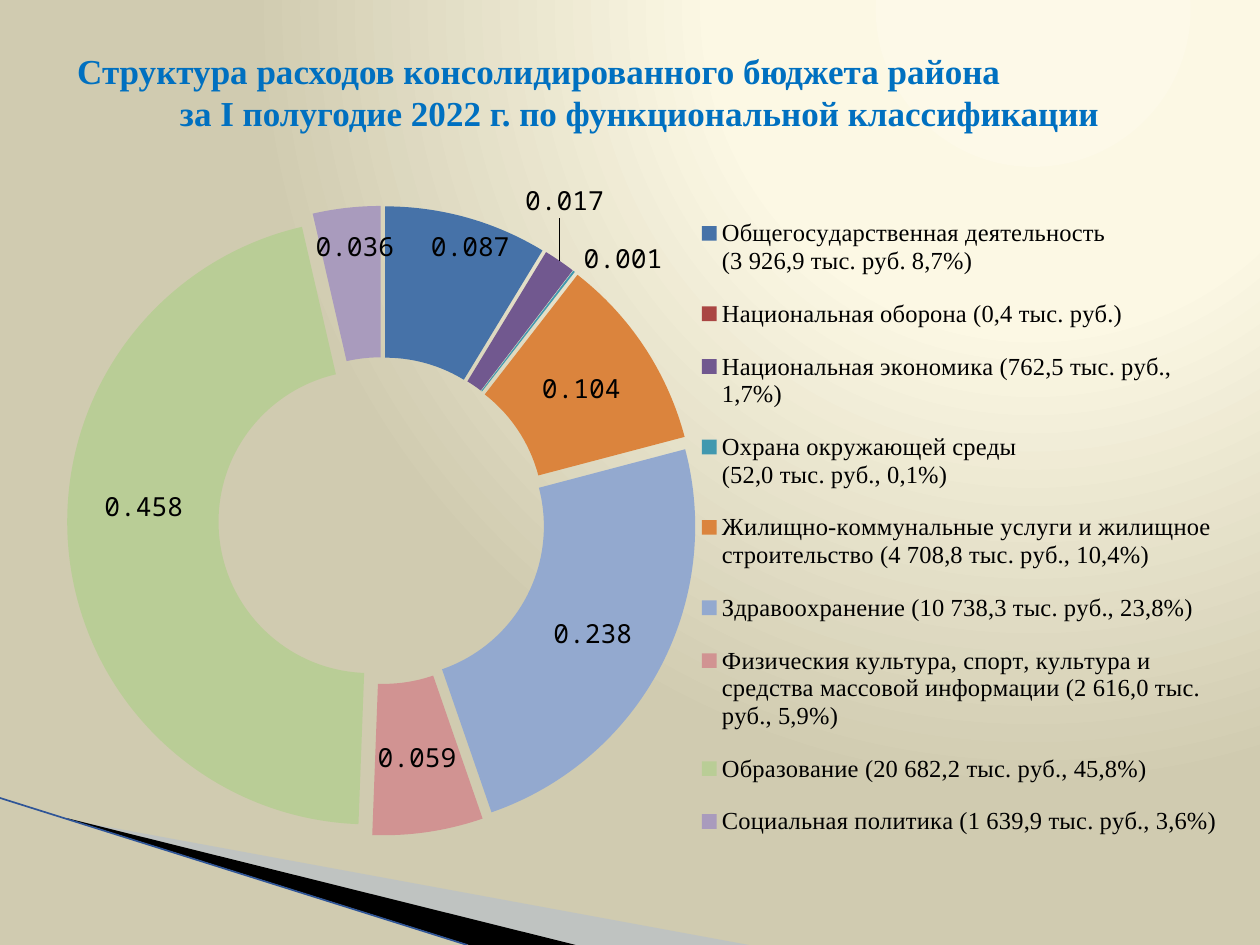
from lxml import etree
from pptx import Presentation
from pptx.chart.data import CategoryChartData
from pptx.dml.color import RGBColor
from pptx.enum import chart as ch, shapes, text
from pptx.oxml import parse_xml
from pptx.oxml.ns import nsdecls, qn
from pptx.util import Pt

THEME = {
    "sans": "Noto Sans Mono", "serif": "Times New Roman",
    "title": 20, "label": 15, "legend": 14,
    "blue": "0070C0", "ink": "000000", "haze": "A7B9DB", "edge": "2F5597",
    "back": [(0, "FDF9E8"), (40, "FCF8E4"), (100, "D0CBB0")],
}

# Title lines: wording, alignment
TITLE = [
    ("Структура расходов консолидированного бюджета района", "LEFT"),
    ("за I полугодие 2022 г. по функциональной классификации", "CENTER"),
]
# Spending: legend wording, share, colour, label shift as part of the chart
SPEND = [
    ("Общегосударственная деятельность\n(3 926,9 тыс. руб. 8,7%)", 0.087, "4672A8", (0.02, -0.06)),
    ("Национальная оборона (0,4 тыс. руб.)", None, "AA4643", None),
    ("", None, "89A54E", None),
    ("Национальная экономика (762,5 тыс. руб., 1,7%)", 0.017, "71588F", (0.04, -0.17)),
    ("Охрана окружающей среды\n(52,0 тыс. руб., 0,1%)", 0.001, "4198AF", (0.08, -0.1)),
    ("Жилищно-коммунальные услуги и жилищное строительство (4 708,8 тыс. руб., 10,4%)",
     0.104, "DB843D", None),
    ("Здравоохранение (10 738,3 тыс. руб., 23,8%)", 0.238, "93A9CF", None),
    ("Физическия культура, спорт, культура и средства массовой информации "
     "(2 616,0 тыс. руб., 5,9%)", 0.059, "D19392", None),
    ("Образование (20 682,2 тыс. руб., 45,8%)", 0.458, "B9CD96", (0, -0.05)),
    ("Социальная политика (1 639,9 тыс. руб., 3,6%)", 0.036, "A99BBD", (0, -0.05)),
]
# Corner wedges: outline, colour, opacity in percent
WEDGES = [
    ([(39.6, 468.5), (428, 540), (328, 540), (39.6, 468)], "haze", 40),
    ([(38, 467.5), (329, 540), (268, 540), (39, 468)], "ink", 100),
]
PLOT = (0.01, 0.056, 0.548, 0.869)
KEY = (0.549, 0.04, 0.44, 0.92)


def rgb(name):
    return RGBColor.from_string(THEME.get(name, name))


def style(obj, **vals):
    for key, val in vals.items():
        setattr(obj, key, val)


def font(obj, face, size, color, bold=False):
    style(obj, name=THEME[face], size=Pt(THEME[size]), bold=bold)
    obj.color.rgb = rgb(color)


def node(tag, body=""):
    return parse_xml(f"<{tag} {nsdecls('c', 'a')}>{body}</{tag}>")


def layout(box, inner=False):
    kind = '<c:layoutTarget val="inner"/>' if inner else ""
    modes = '<c:xMode val="edge"/><c:yMode val="edge"/>' if len(box) == 4 else ""
    size = "".join(f'<c:{k} val="{v}"/>' for k, v in zip("xywh", box))
    return f"<c:manualLayout>{kind}{modes}{size}</c:manualLayout>"


def set_layout(part, box, after, inner=False):
    for old in part.findall(qn("c:layout")):
        part.remove(old)
    new = node("c:layout", layout(box, inner))
    if after is None:
        part.insert(0, new)
    else:
        after.addnext(new)


def paint_back(slide):
    slide.background.fill.gradient()
    grad = slide.element.find(".//" + qn("a:gradFill"))
    stops = "".join(f'<a:gs pos="{p * 1000}"><a:srgbClr val="{c}"/></a:gs>'
                    for p, c in THEME["back"])
    for kid in list(grad):
        grad.remove(kid)
    grad.append(node("a:gsLst", stops))
    shade = etree.SubElement(grad, qn("a:path"), {"path": "circle"})
    etree.SubElement(shade, qn("a:fillToRect"), {"l": "65000", "b": "98000"})


def add_wedge(slide, pts, color, alpha):
    pts = [(Pt(x), Pt(y)) for x, y in pts]
    form = slide.shapes.build_freeform(*pts[0], scale=1.0)
    form.add_line_segments(pts[1:], close=True)
    wedge = form.convert_to_shape()
    wedge.shadow.inherit = False
    wedge.fill.solid()
    wedge.fill.fore_color.rgb = rgb(color)
    wedge.line.fill.background()
    if alpha < 100:
        tint = wedge.element.spPr.find(".//" + qn("a:srgbClr"))
        etree.SubElement(tint, qn("a:alpha"), val=str(alpha * 1000))


def add_edge(slide):
    edge = slide.shapes.add_connector(
        shapes.MSO_CONNECTOR.STRAIGHT, Pt(0), Pt(456), Pt(267), Pt(540))
    edge.line.width = Pt(0.95)
    edge.line.color.rgb = rgb("edge")
    etree.SubElement(edge.element.spPr, qn("a:effectLst"))


def add_ring(slide):
    data = CategoryChartData()
    data.categories = [row[0] for row in SPEND]
    data.add_series("Series 1", [row[1] for row in SPEND])
    chart = slide.shapes.add_chart(
        ch.XL_CHART_TYPE.DOUGHNUT, Pt(25), Pt(94.5), Pt(680.5), Pt(414), data).chart
    style(chart, has_title=False, has_legend=True)
    font(chart.font, "sans", "label", "ink")
    plot = chart.plots[0]
    plot.vary_by_categories = True
    ring = plot.series[0]

    # Slices, pulled slightly apart
    root = chart.element
    root.find(".//" + qn("c:cat")).addprevious(parse_xml(
        f'<c:explosion {nsdecls("c")} val="8"/>'))
    for i, row in enumerate(SPEND):
        form = ring.points[i].format
        form.fill.solid()
        form.fill.fore_color.rgb = rgb(row[2])
        form.line.fill.background()

    # Share labels
    tags = ring.data_labels
    style(tags, show_value=True, show_percentage=False, show_legend_key=False,
          number_format="General", number_format_is_linked=False)
    font(tags.font, "sans", "label", "ink")
    group = root.find(".//" + qn("c:ser")).find(qn("c:dLbls"))
    flags = "".join(f'<c:show{k} val="{int(k == "Val")}"/>' for k in
                    ("LegendKey", "Val", "CatName", "SerName", "Percent", "BubbleSize"))
    moved = [(i, row[3]) for i, row in enumerate(SPEND) if row[3]]
    for n, (i, shift) in enumerate(moved):
        group.insert(n, node("c:dLbl", f'<c:idx val="{i}"/><c:layout>{layout(shift)}'
                             f"</c:layout>{flags}"))
    lead = group.find(qn("c:showLeaderLines"))
    if lead is None:
        lead = etree.SubElement(group, qn("c:showLeaderLines"))
    lead.set("val", "1")

    # Legend without the unnamed entry
    key = chart.legend
    style(key, position=ch.XL_LEGEND_POSITION.RIGHT, include_in_layout=False)
    font(key.font, "serif", "legend", "ink")
    part = root.find(".//" + qn("c:legend"))
    skip = node("c:legendEntry", '<c:idx val="2"/><c:delete val="1"/>')
    part.find(qn("c:legendPos")).addnext(skip)
    set_layout(part, KEY, skip)
    set_layout(root.find(".//" + qn("c:plotArea")), PLOT, None, True)


def add_title(slide):
    frame = slide.shapes.add_textbox(Pt(31), Pt(21.6), Pt(669), Pt(61)).text_frame
    style(frame, word_wrap=True, vertical_anchor=text.MSO_ANCHOR.MIDDLE)
    for i, (line, side) in enumerate(TITLE):
        para = frame.add_paragraph() if i else frame.paragraphs[0]
        para.alignment = text.PP_ALIGN[side]
        if side == "LEFT":
            para._p.get_or_add_pPr().set("marL", str(Pt(6)))
        run = para.add_run()
        run.text = line
        font(run.font, "serif", "title", "blue", True)


def main():
    deck = Presentation()
    style(deck, slide_width=Pt(720), slide_height=Pt(540))
    slide = deck.slides.add_slide(deck.slide_layouts[6])
    paint_back(slide)
    for wedge in WEDGES:
        add_wedge(slide, *wedge)
    add_edge(slide)
    add_ring(slide)
    add_title(slide)
    deck.save("out.pptx")


if __name__ == "__main__":
    main()
